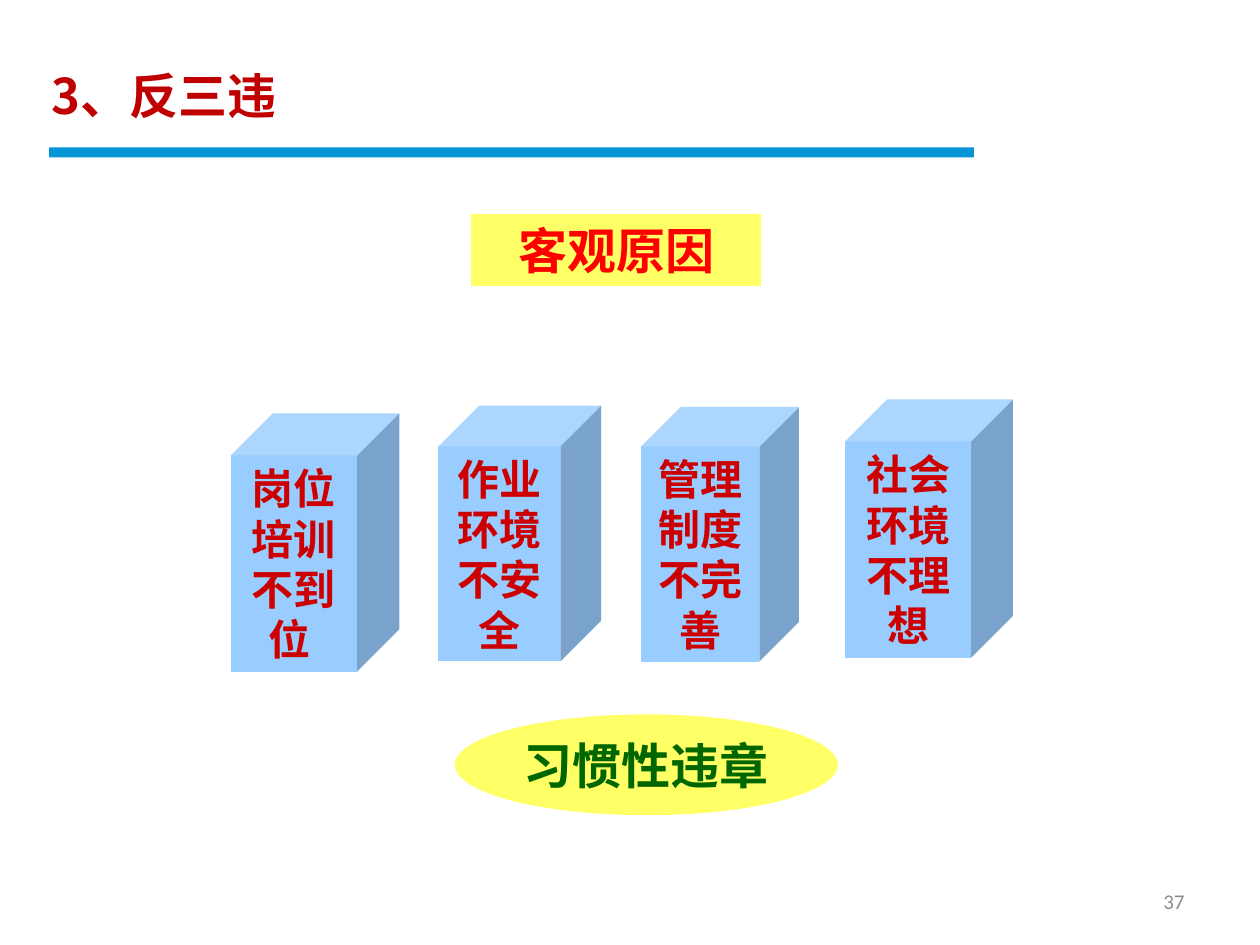
from collections import namedtuple

from lxml.etree import SubElement
from pptx import Presentation
from pptx.dml.color import RGBColor
from pptx.enum.shapes import MSO_SHAPE as Shape
from pptx.enum.text import MSO_ANCHOR as Anchor, PP_ALIGN as Align
from pptx.oxml.ns import qn
from pptx.util import Inches, Pt

Box = namedtuple("Box", "left top width height")
CJK_FONT = "Noto Sans CJK SC"
SLIDE = Box(0, 0, 10, 7.5)
CAUSES = [
    (0, 0.11, 1.34, 2.05, ["岗位", "培训", "不到", "位 "]),
    (1.65, 0.05, 1.29, 2.03, ["作业", "环境", "不安", "全"]),
    (3.26, 0.06, 1.25, 2.02, ["管理", "制度", "不完", "善"]),
    (4.88, 0, 1.33, 2.05, ["社会", "环境", "不理", "想"]),
]


def color(value):
    return RGBColor.from_string(value)


def inside(box, left, top, width, height):
    return Box(box.left + left, box.top + top, width, height)


def write(shape, lines, size, text_color, font=CJK_FONT, bold=True,
          align=Align.CENTER, anchor=Anchor.MIDDLE, wrap=True):
    frame = shape.text_frame
    frame.text = "\n".join(lines)
    frame.word_wrap = wrap
    frame.vertical_anchor = anchor
    for paragraph in frame.paragraphs:
        paragraph.alignment = align
        for run in paragraph.runs:
            run.font.size = Pt(size)
            run.font.bold = bold
            run.font.color.rgb = color(text_color)
            run.font.name = font
            east_asian = SubElement(run.font._element, qn("a:ea"))
            east_asian.set("typeface", font)


def add_block(slide, kind, box, fill):
    shape = slide.shapes.add_shape(kind, *map(Inches, box))
    shape.shadow.inherit = False
    shape.fill.solid()
    shape.fill.fore_color.rgb = color(fill)
    shape.line.fill.background()
    return shape


def add_header(slide, box):
    add_block(slide, Shape.RECTANGLE, inside(box, 0.08, 0.7, 7.34, 0.08), "0595D4")
    title = slide.shapes.add_textbox(*map(Inches, inside(box, 0, 0, box.width, 0.57)))
    write(title, ["3、反三违"], 28, "C00000", align=Align.LEFT, anchor=Anchor.TOP)


def add_topic(slide, box):
    topic = add_block(slide, Shape.RECTANGLE, box, "FFFF66")
    write(topic, ["客观原因"], 28, "FF0000")


def add_causes(slide, box):
    for left, top, width, height, lines in CAUSES:
        cube = add_block(slide, Shape.CUBE, inside(box, left, top, width, height), "99CCFF")
        cube.adjustments[0] = 0.25
        write(cube, lines, 24, "CC0000")


def add_result(slide, box):
    result = add_block(slide, Shape.OVAL, box, "FFFF66")
    write(result, ["习惯性违章"], 28, "006600", wrap=False)


def add_page_number(slide, box):
    number = slide.shapes.add_textbox(*map(Inches, box))
    write(number, ["37"], 12, "8C8C8C", font="Calibri", bold=False, align=Align.RIGHT)


def main():
    presentation = Presentation()
    presentation.slide_width = Inches(SLIDE.width)
    presentation.slide_height = Inches(SLIDE.height)
    slide = presentation.slides.add_slide(presentation.slide_layouts[6])
    add_header(slide, inside(SLIDE, 0.31, 0.47, 7.5, 0.78))
    add_topic(slide, inside(SLIDE, 3.74, 1.7, 2.3, 0.57))
    add_causes(slide, inside(SLIDE, 1.83, 3.17, 6.21, 2.16))
    add_result(slide, inside(SLIDE, 3.61, 5.67, 3.04, 0.8))
    add_page_number(slide, inside(SLIDE, 7.17, 6.95, 2.33, 0.4))
    presentation.save("out.pptx")


if __name__ == "__main__":
    main()
